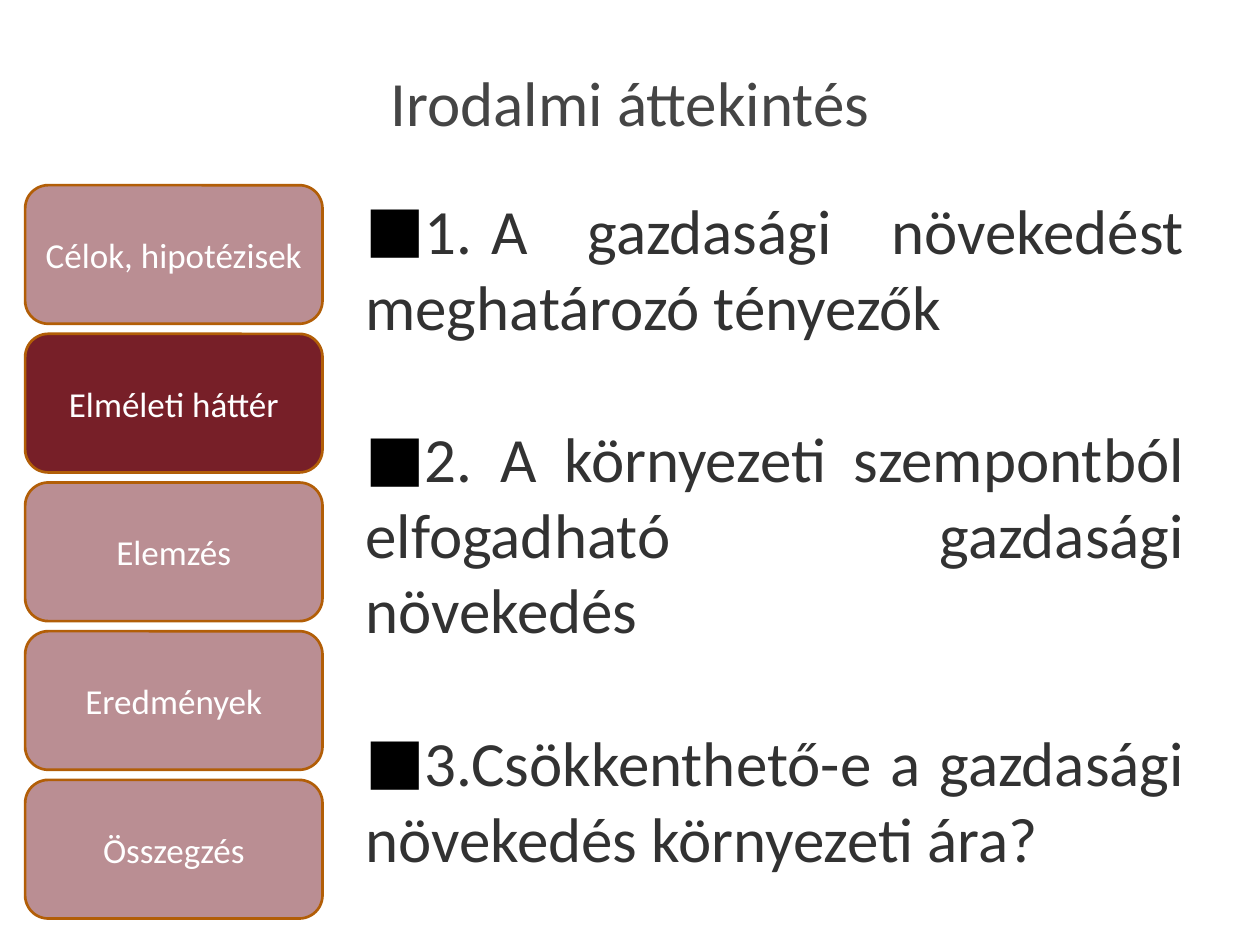
from lxml import etree
from pptx import Presentation
from pptx import util as u
from pptx.dml.color import RGBColor
from pptx.enum import shapes, text
from pptx.oxml.ns import qn

prs = Presentation()
prs.slide_width, prs.slide_height = u.Inches(10), u.Inches(7.5)
s = prs.slides.add_slide(prs.slide_layouts[1])


def rgb(value):
    return RGBColor.from_string(value)


def write(p, content, size=36, color="323232", align=text.PP_ALIGN.CENTER):
    p.alignment = align
    r = p.add_run()
    r.text = content
    r.font.name, r.font.size = "Calibri", u.Pt(size)
    r.font.color.rgb = rgb(color)


# Title
title = s.shapes.title
title.left, title.top = u.Inches(0.5), u.Inches(0.3)
title.width, title.height = u.Inches(9), u.Inches(1.01)
title.text_frame.vertical_anchor = text.MSO_ANCHOR.MIDDLE
write(title.text_frame.paragraphs[0], "Irodalmi áttekintés", color="454545")

# Numbered topics with square bullets
top = 1.47
body = s.placeholders[1]
body.left, body.top = u.Inches(2.8), u.Inches(top)
body.width, body.height = u.Inches(6.7), u.Inches(5.59)
tf = body.text_frame
tf.auto_size = text.MSO_AUTO_SIZE.NONE
topics = [
    "1.\tA gazdasági növekedést meghatározó tényezők",
    "2. A környezeti szempontból elfogadható gazdasági növekedés",
    "3.Csökkenthető-e a gazdasági növekedés környezeti ára?",
]
for i, topic in enumerate(topics):
    p = tf.paragraphs[0] if i == 0 else tf.add_paragraph()
    write(p, topic, align=text.PP_ALIGN.JUSTIFY)
    p.space_before = u.Pt(44 if i else 0)
    pPr = p._p.get_or_add_pPr()
    pPr.set("marL", "0")
    pPr.set("indent", str(-u.Inches(0.38)))
    bullet_color = etree.SubElement(pPr, qn("a:buClr"))
    etree.SubElement(bullet_color, qn("a:srgbClr"), val="000000")
    etree.SubElement(pPr, qn("a:buFont"), typeface="Calibri")
    etree.SubElement(pPr, qn("a:buChar"), char="■")

# Section navigation, current section in full colour
sections = ["Célok, hipotézisek", "Elméleti háttér", "Elemzés", "Eredmények", "Összegzés"]
current = "Elméleti háttér"
pitch = 1.18
for row, section in enumerate(sections):
    sp = s.shapes.add_shape(shapes.MSO_SHAPE.ROUNDED_RECTANGLE, u.Inches(0.2),
                            u.Inches(top + row * pitch), u.Inches(2.36), u.Inches(1.1))
    sp.shadow.inherit = False
    sp.fill.solid()
    sp.fill.fore_color.rgb = rgb("771F28")
    if section != current:
        color = sp.fill._xPr.find(qn("a:solidFill"))[0]
        etree.SubElement(color, qn("a:alpha"), val="50000")
    sp.line.color.rgb = rgb("B25E07")
    sp.line.width = u.Pt(1.54)
    tf = sp.text_frame
    tf.word_wrap = True
    tf.margin_left = tf.margin_right = u.Inches(0.08)
    tf.vertical_anchor = text.MSO_ANCHOR.MIDDLE
    write(tf.paragraphs[0], section, size=20, color="FFFFFF")

prs.save("out.pptx")
